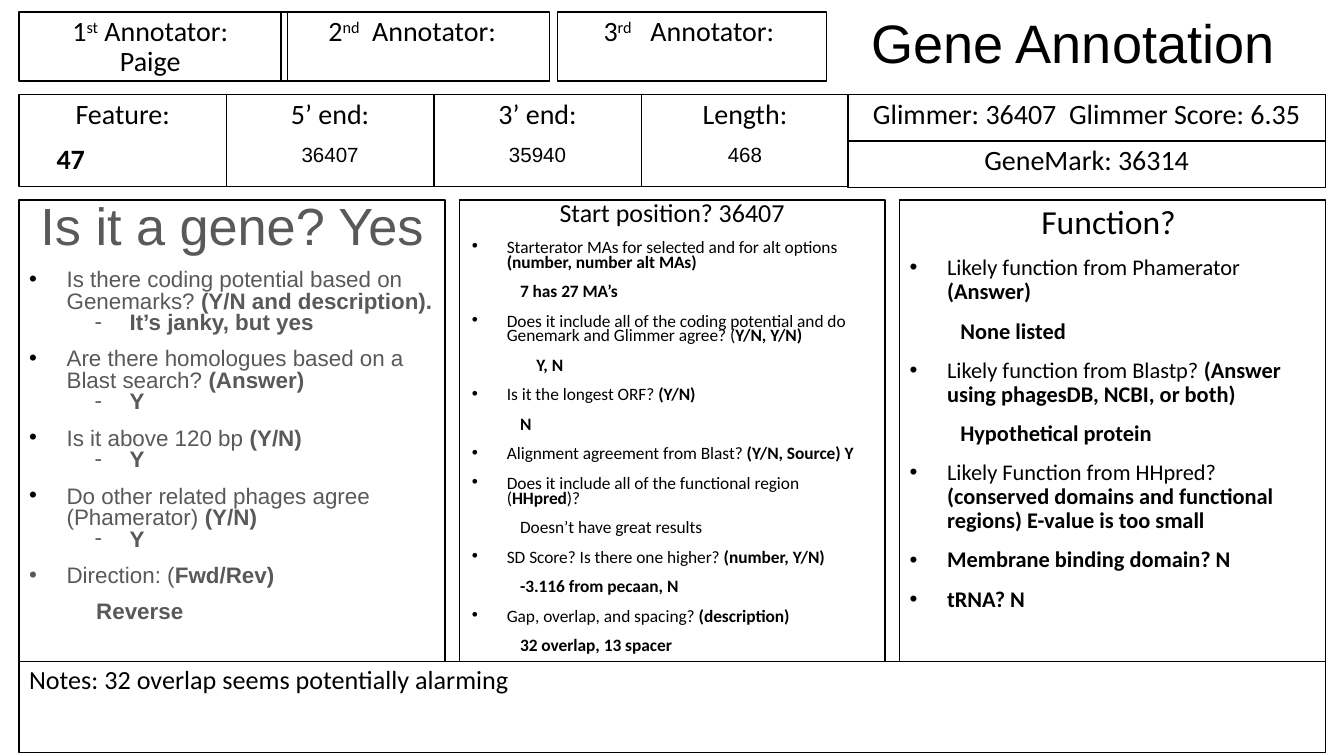
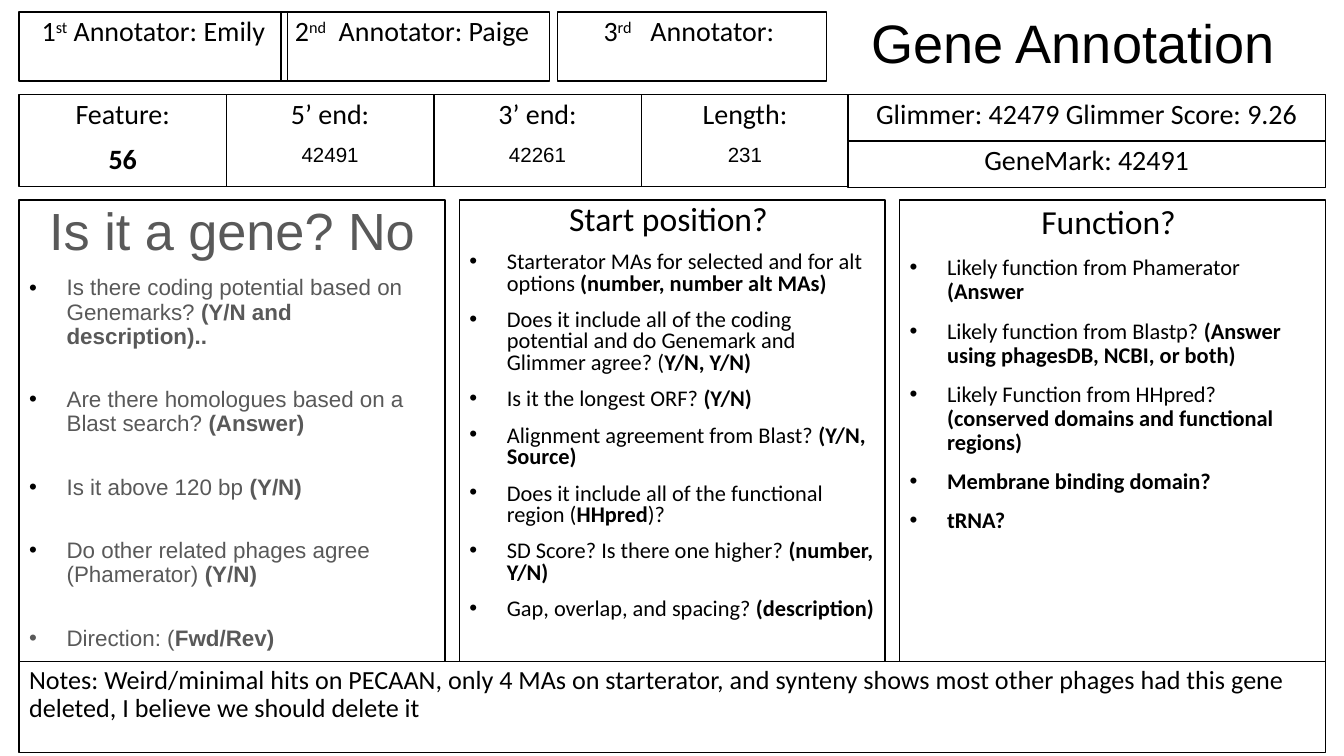
"""Build two gene annotation worksheets, one slide per gene."""
from lxml import etree
from pptx import Presentation
from pptx.dml.color import RGBColor
from pptx.enum.shapes import MSO_SHAPE
from pptx.enum.text import MSO_ANCHOR, PP_ALIGN
from pptx.oxml.ns import qn
from pptx.util import Cm, Pt

RECT = MSO_SHAPE.RECTANGLE
TOP, BOTTOM = MSO_ANCHOR.TOP, MSO_ANCHOR.BOTTOM
LEFT, CENTER = PP_ALIGN.LEFT, PP_ALIGN.CENTER

COLORS = {"ink": "000000", "gray": "595959"}
SANS, BODY = "Arial", "Calibri"
BOLD, RAISED = "**", "^"

GENE_QUESTIONS = [
    "Is there coding potential based on Genemarks? **(Y/N and description)",
    "Are there homologues based on a Blast search? **(Answer)",
    "Is it above 120 bp **(Y/N)",
    "Do other related phages agree (Phamerator)** (Y/N)",
    "Direction: (**Fwd/Rev)",
]
START_QUESTIONS = [
    "Starterator MAs for selected and for alt options** (number, number alt MAs)",
    "Does it include all of the coding potential and do Genemark and Glimmer agree? (**Y/N, Y/N)",
    "Is it the longest ORF? **(Y/N)",
    "Alignment agreement from Blast? **(Y/N, Source)",
    "Does it include all of the functional region (**HHpred**)?",
    "SD Score? Is there one higher? **(number, Y/N)",
    "Gap, overlap, and spacing? **(description)",
]
FUNCTION_QUESTIONS = [
    "Likely function from Phamerator **(Answer",
    "Likely function from Blastp? **(Answer using phagesDB, NCBI, or both)",
    "Likely Function from HHpred? **(conserved domains and functional regions)",
    "**Membrane binding domain?",
    "**tRNA?",
]

# Each panel: "endings" extend a question, "answers" follow it as (kind, text).
SHEETS = [
    {
        "annotators": [["1^st^ Annotator: ", "Paige "], ["2^nd^  Annotator: "],
                       ["3^rd^   Annotator: "]],
        "facts": [("Feature:", "**47"), ("5’ end:", "36407"),
                  ("3’ end:", "35940"), ("Length:", "468")],
        "feature_indent": 0.52,
        "calls": ["Glimmer: 36407  Glimmer Score: 6.35", "GeneMark: 36314"],
        "gene": {
            "title": "Is it a gene? Yes", "spacing": 0.8,
            "endings": {0: "."},
            "answers": {0: ("dash", "**It’s janky, but yes"), 1: ("dash", "**Y"),
                        2: ("dash", "**Y"), 3: ("dash", "**Y"),
                        4: ("deep", "**Reverse")},
        },
        "start": {
            "title": "Start position? 36407", "spacing": 0.7,
            "title_size": 13.9, "size": 9.3, "hang": 0.66,
            "endings": {3: " Y"},
            "answers": {0: ("answer", "**7 has 27 MA’s"), 1: ("deep", "**Y, N"),
                        2: ("answer", "**N"),
                        4: ("answer", "Doesn’t have great results"),
                        5: ("answer", "**-3.116 from pecaan, N"),
                        6: ("answer", "**32 overlap, 13 spacer")},
        },
        "function": {
            "title": "Function? ", "spacing": 0.9,
            "endings": {0: ")", 2: " E-value is too small", 3: " N", 4: " N"},
            "answers": {0: ("answer", "**None listed"),
                        1: ("answer", "**Hypothetical protein")},
        },
        "notes": "Notes: 32 overlap seems potentially alarming",
    },
    {
        "annotators": [["1^st^ Annotator: Emily"], ["2^nd^  Annotator: Paige "],
                       ["3^rd^   Annotator: "]],
        "facts": [("Feature:", "**56"), ("5’ end:", "42491"),
                  ("3’ end:", "42261"), ("Length:", "231")],
        "calls": ["Glimmer: 42479 Glimmer Score: 9.26", "GeneMark: 42491"],
        "gene": {"title": "Is it a gene? No", "spacing": 0.9, "gap": 21,
                 "endings": {0: ".."}},
        "start": {"title": "Start position? ", "spacing": 0.8},
        "function": {"title": "Function? ", "spacing": 0.9},
        "notes": "Notes: Weird/minimal hits on PECAAN, only 4 MAs on starterator, "
                 "and synteny shows most other phages had this gene deleted, "
                 "I believe we should delete it",
    },
]

MARGIN, FULL_W = 0.36, 24.69
ANNOTATOR_LEFTS = [MARGIN, 5.31, 10.54]
FACT_W, FACT_TOP, FACT_H = 3.92, 1.79, 1.74
CALL_LEFT, CALL_W, CALL_H = 16.03, 9.02, 0.88
PANEL_W, PANEL_STEP, PANEL_TOP, PANEL_H = 8.05, 8.32, 3.78, 8.72
HANG, GAP = 0.71, 8


def rgb(name):
    return RGBColor.from_string(COLORS[name])


def set_frame(shape, anchor=TOP):
    tf = shape.text_frame
    tf.word_wrap = True
    tf.vertical_anchor = anchor
    tf.margin_left = tf.margin_right = Cm(0.19)
    tf.margin_top = tf.margin_bottom = Cm(0.1)
    return tf


def add_box(s, left, top, width, height):
    sp = s.shapes.add_shape(RECT, Cm(left), Cm(top), Cm(width), Cm(height))
    sp.shadow.inherit = False
    sp.fill.background()
    sp.line.color.rgb = rgb("ink")
    sp.line.width = Pt(0.75)
    return set_frame(sp)


def write(tf, text, size, font=BODY, color="ink", align=CENTER, spacing=0.9, before=0):
    p = tf.paragraphs[0]
    if p.runs:
        p = tf.add_paragraph()
    p.alignment = align
    p.line_spacing = spacing
    p.space_before = Pt(before)
    for i, part in enumerate(text.split(BOLD)):
        for j, piece in enumerate(part.split(RAISED)):
            if not piece:
                continue
            r = p.add_run()
            r.text = piece
            r.font.name = font
            r.font.size = Pt(size)
            r.font.bold = i % 2 == 1
            r.font.color.rgb = rgb(color)
            if j % 2:
                r.font._element.set("baseline", "30000")
    return p


def indent(p, left, hang=0, bullet=None, color="ink"):
    pPr = p._p.get_or_add_pPr()
    pPr.set("marL", str(Cm(left)))
    pPr.set("indent", str(-Cm(hang)))
    if bullet:
        clr = etree.SubElement(pPr, qn("a:buClr"))
        etree.SubElement(clr, qn("a:srgbClr")).set("val", COLORS[color])
        etree.SubElement(pPr, qn("a:buFont")).set("typeface", SANS)
        etree.SubElement(pPr, qn("a:buChar")).set("char", bullet)


def add_panel(s, column, questions, panel, title_size=18, font=BODY, color="ink"):
    tf = add_box(s, MARGIN + column * PANEL_STEP, PANEL_TOP, PANEL_W, PANEL_H)
    look = {"font": font, "color": color, "spacing": panel["spacing"]}
    write(tf, panel["title"], panel.get("title_size", title_size), **look)
    look.update(size=panel.get("size", 12), align=LEFT)
    endings, answers = panel.get("endings", {}), panel.get("answers", {})
    for i, question in enumerate(questions):
        before = panel.get("gap", GAP) if i else GAP
        p = write(tf, question + endings.get(i, ""), before=before, **look)
        last = i == len(questions) - 1
        indent(p, HANG, panel.get("hang", HANG), "•", color if last else "ink")
        if i not in answers:
            continue
        kind, text = answers[i]
        if kind == "dash":
            indent(write(tf, text, **look), 1.9, 0.66, "-", color)
        else:
            indent(write(tf, text, before=GAP, **look), 1.27 if kind == "deep" else 0.96)


def add_sheet(prs, sheet):
    s = prs.slides.add_slide(prs.slide_layouts[6])
    title = s.shapes.add_textbox(Cm(15.52), Cm(0.15), Cm(9.53), Cm(1.37))
    write(set_frame(title, BOTTOM), "Gene Annotation", 29, SANS)

    add_panel(s, 2, FUNCTION_QUESTIONS, sheet["function"])
    add_panel(s, 0, GENE_QUESTIONS, sheet["gene"], 28, SANS, "gray")
    add_panel(s, 1, START_QUESTIONS, sheet["start"])

    for i, (label, value) in enumerate(sheet["facts"]):
        tf = add_box(s, MARGIN + i * FACT_W, FACT_TOP, FACT_W, FACT_H)
        write(tf, label, 15)
        if i:
            write(tf, value, 11, SANS, before=GAP)
        elif "feature_indent" in sheet:
            indent(write(tf, value, 15, align=LEFT, before=GAP), sheet["feature_indent"])
        else:
            write(tf, value, 15, before=GAP)

    for i, call in enumerate(sheet["calls"]):
        write(add_box(s, CALL_LEFT, FACT_TOP + i * CALL_H, CALL_W, CALL_H), call, 15)

    for left, lines in zip(ANNOTATOR_LEFTS, sheet["annotators"]):
        tf = add_box(s, left, 0.23, 5.08, 1.3)
        for line in lines:
            write(tf, line, 15)

    notes = add_box(s, MARGIN, PANEL_TOP + PANEL_H, FULL_W, 1.73)
    write(notes, sheet["notes"], 14, align=LEFT)


def main():
    prs = Presentation()
    prs.slide_width, prs.slide_height = Cm(25.4), Cm(14.29)
    for sheet in SHEETS:
        add_sheet(prs, sheet)
    prs.save("out.pptx")


if __name__ == "__main__":
    main()
